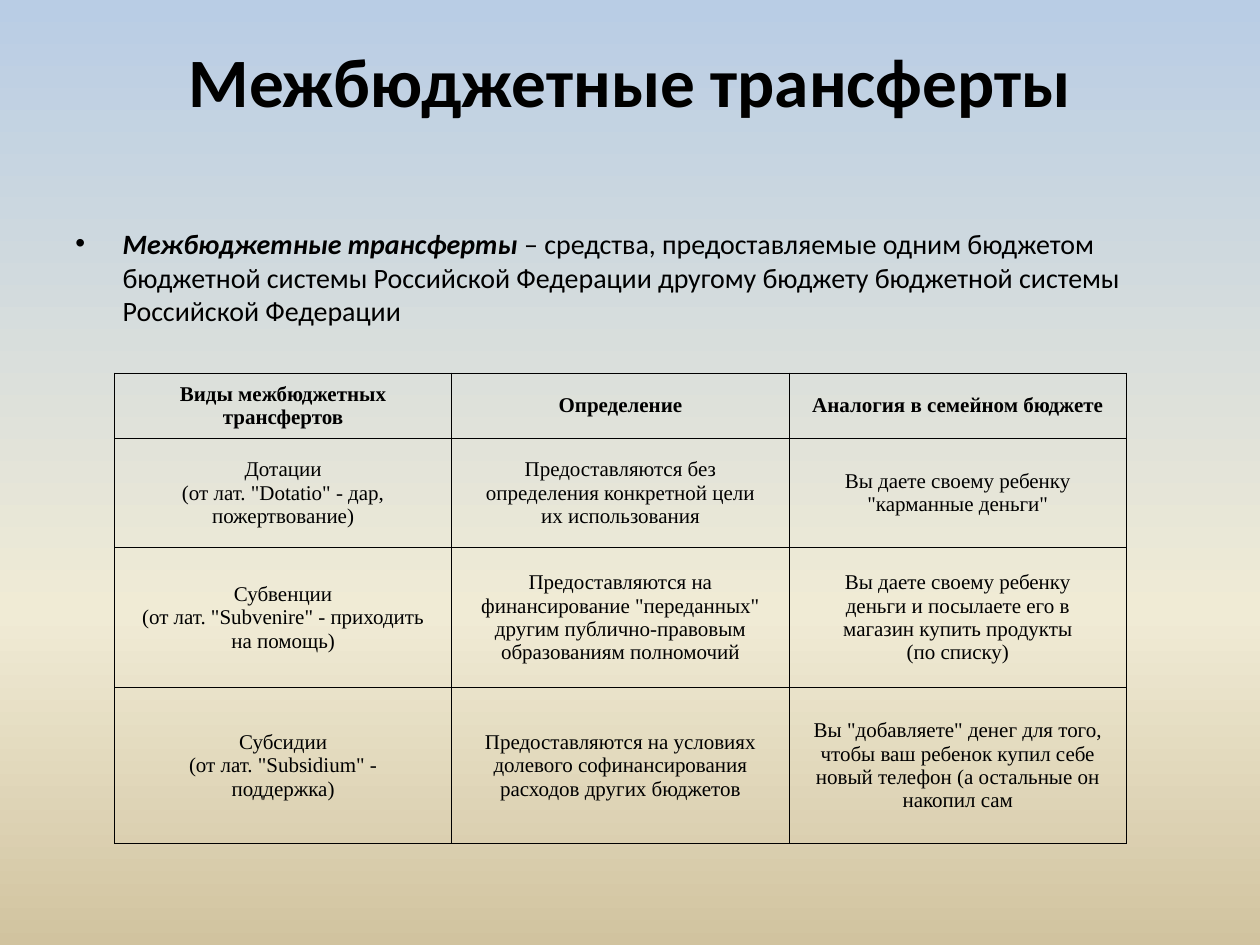
import copy

import pptx
import pptx.dml.color
import pptx.enum.text
import pptx.oxml
import pptx.oxml.ns
import pptx.util

Pt = pptx.util.Pt
MIDDLE = pptx.enum.text.MSO_ANCHOR.MIDDLE
TOP = pptx.enum.text.MSO_ANCHOR.TOP
CENTER = pptx.enum.text.PP_ALIGN.CENTER
NAMESPACE = pptx.oxml.ns.nsdecls("a")


def color(value):
    return pptx.dml.color.RGBColor.from_string(value)


def format_font(font, **values):
    font.color.rgb = color("000000")
    for name, value in values.items():
        setattr(font, name, value)


presentation = pptx.Presentation()
presentation.slide_width = Pt(720)
presentation.slide_height = Pt(540)
slide = presentation.slides.add_slide(presentation.slide_layouts[5])

# Background
fill = slide.background.fill
fill.gradient()
fill.gradient_angle = 270
stop_list = slide.element.xpath(".//p:bg//a:gsLst")[0]
stop_list.append(copy.deepcopy(stop_list[-1]))
background_stops = [(0, "B9CDE5"), (0.65, "F0EBD5"), (1, "D1C39F")]
for stop, (position, value) in zip(fill.gradient_stops, background_stops):
    stop.position = position
    stop.color.rgb = color(value)

# Title
title = slide.shapes.title
title.left, title.top, title.width, title.height = Pt(36), Pt(21.6), Pt(648), Pt(90)
title.text_frame.text = "Межбюджетные трансферты"
title.text_frame.vertical_anchor = TOP
title.text_frame.margin_top = 0
paragraph = title.text_frame.paragraphs[0]
paragraph.alignment = CENTER
format_font(paragraph.runs[0].font, name="Calibri", size=Pt(39.6), bold=True)

# Definition
definition = slide.shapes.add_textbox(Pt(36), Pt(126), Pt(648), Pt(80))
definition.text_frame.word_wrap = True
paragraph = definition.text_frame.paragraphs[0]
properties = paragraph._p.get_or_add_pPr()
properties.set("marL", str(Pt(27)))
properties.set("indent", str(Pt(-27)))
properties.append(pptx.oxml.parse_xml(f'<a:buFont {NAMESPACE} typeface="Arial"/>'))
properties.append(pptx.oxml.parse_xml(f'<a:buChar {NAMESPACE} char="•"/>'))
definition_runs = [
    ("Межбюджетные трансферты ", True),
    ("– средства, предоставляемые одним бюджетом бюджетной системы Российской Федерации "
     "другому бюджету бюджетной системы Российской Федерации", False),
]
for text, emphasis in definition_runs:
    run = paragraph.add_run()
    run.text = text
    format_font(run.font, name="Calibri", size=Pt(16), bold=emphasis, italic=emphasis)

# Table of transfer types
rows = [
    ("Виды межбюджетных\nтрансфертов", "Определение", "Аналогия в семейном бюджете"),
    ('Дотации\n(от лат. "Dotatio" - дар,\nпожертвование)',
     "Предоставляются без\nопределения конкретной цели\nих использования",
     'Вы даете своему ребенку\n"карманные деньги"'),
    ('Субвенции\n(от лат. "Subvenire" - приходить\nна помощь)',
     'Предоставляются на\nфинансирование "переданных"\nдругим публично-правовым\nобразованиям полномочий',
     "Вы даете своему ребенку\nденьги и посылаете его в\nмагазин купить продукты\n(по списку)"),
    ('Субсидии\n(от лат. "Subsidium" -\nподдержка)',
     "Предоставляются на условиях\nдолевого софинансирования\nрасходов других бюджетов",
     'Вы "добавляете" денег для того,\nчтобы ваш ребенок купил себе\nновый телефон (а остальные он\nнакопил сам'),
]
row_heights = [37.2, 62.7, 80, 89]
cell_format = {
    "vertical_anchor": MIDDLE,
    "margin_left": Pt(3.6), "margin_right": Pt(3.6),
    "margin_top": Pt(2.2), "margin_bottom": Pt(2.2),
}
table = slide.shapes.add_table(
    len(rows), 3, Pt(65.4), Pt(213.2), Pt(578.4), Pt(sum(row_heights))).table
table.first_row = table.horz_banding = False
for column in table.columns:
    column.width = Pt(192.8)

for row_index, texts in enumerate(rows):
    table.rows[row_index].height = Pt(row_heights[row_index])
    for column_index, text in enumerate(texts):
        cell = table.cell(row_index, column_index)
        for name, value in cell_format.items():
            setattr(cell, name, value)
        cell_properties = cell._tc.get_or_add_tcPr()
        for side in "LRTB":
            cell_properties.append(pptx.oxml.parse_xml(
                f'<a:ln{side} {NAMESPACE} w="{Pt(0.5)}"><a:solidFill>'
                f'<a:srgbClr val="000000"/></a:solidFill></a:ln{side}>'))
        cell.fill.background()
        # A vertical tab becomes a line break within the paragraph
        cell.text_frame.text = text.replace("\n", "\v")
        paragraph = cell.text_frame.paragraphs[0]
        paragraph.alignment = CENTER
        for run in paragraph.runs:
            format_font(run.font, name="Times New Roman", size=Pt(12), bold=row_index == 0)

presentation.save("out.pptx")
